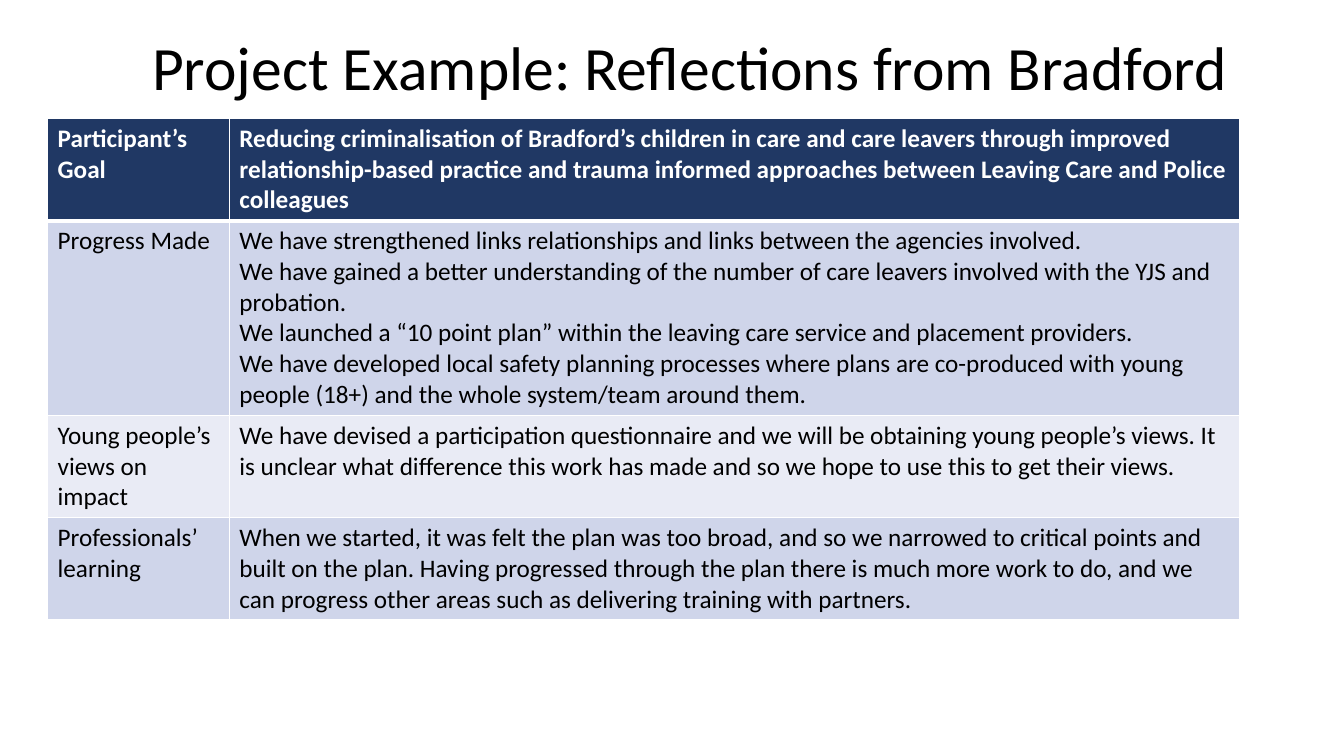
from lxml import etree
from pptx import Presentation
from pptx.dml.color import RGBColor
from pptx.enum.text import MSO_ANCHOR, MSO_AUTO_SIZE, PP_ALIGN
from pptx.oxml.ns import qn
from pptx.util import Cm, Pt

MIDDLE = MSO_ANCHOR.MIDDLE
NO_AUTOFIT = MSO_AUTO_SIZE.NONE
LEFT = PP_ALIGN.LEFT
TITLE_ONLY = 5

REFLECTIONS = [
    ("Participant’s Goal", [
        "Reducing criminalisation of Bradford’s children in care and care leavers "
        "through improved relationship-based practice and trauma informed approaches "
        "between Leaving Care and Police colleagues"]),
    ("Progress Made", [
        "We have strengthened links relationships and links between the agencies involved.",
        "We have gained a better understanding of the number of care leavers involved "
        "with the YJS and probation.",
        "We launched a “10 point plan” within the leaving care service and placement providers.",
        "We have developed local safety planning processes where plans are co-produced "
        "with young people (18+) and the whole system/team around them."]),
    ("Young people’s views on impact", [
        "We have devised a participation questionnaire and we will be obtaining young "
        "people’s views. It is unclear what difference this work has made and so we hope "
        "to use this to get their views."]),
    ("Professionals’ learning", [
        "When we started, it was felt the plan was too broad, and so we narrowed to "
        "critical points and built on the plan. Having progressed through the plan there "
        "is much more work to do, and we can progress other areas such as delivering "
        "training with partners."]),
]


def rgb(code):
    """Turn a hex string into a colour."""
    return RGBColor.from_string(code)


class SlideBuilder:
    """Hold the style and the current slide, and add its elements."""

    FONT = "Calibri"
    INK = "000000"
    WHITE = "FFFFFF"
    NAVY = "203864"
    BANDS = ("E9EBF5", "CFD5EA")

    def __init__(self, slide):
        """Keep the slide to draw on."""
        self.slide = slide

    def format_text(self, frame, size, color, bold=False):
        """Apply the font to every run of a text frame."""
        for paragraph in frame.paragraphs:
            for run in paragraph.runs:
                run.font.name = self.FONT
                run.font.size = Pt(size)
                run.font.bold = bold
                run.font.color.rgb = rgb(color)

    def title(self, wording, left, top, width, height):
        """Fill and place the title placeholder."""
        heading = self.slide.shapes.title
        heading.left, heading.top = Cm(left), Cm(top)
        heading.width, heading.height = Cm(width), Cm(height)
        frame = heading.text_frame
        frame.text = wording
        frame.auto_size = NO_AUTOFIT
        frame.vertical_anchor = MIDDLE
        frame.paragraphs[0].alignment = LEFT
        frame.paragraphs[0].line_spacing = 0.9
        self.format_text(frame, 44, self.INK)

    def borders(self, cell, widths):
        """Draw white cell borders with a width in points for each side."""
        properties = cell._tc.get_or_add_tcPr()
        for side, width in widths.items():
            line = etree.SubElement(properties, qn(f"a:ln{side}"), w=str(Pt(width)))
            fill = etree.SubElement(line, qn("a:solidFill"))
            etree.SubElement(fill, qn("a:srgbClr"), val=self.WHITE)

    def table(self, rows, left, top, column_widths, row_height):
        """Add a table with a dark header row and banded body rows."""
        grid = self.slide.shapes.add_table(
            len(rows), len(column_widths), Cm(left), Cm(top),
            Cm(sum(column_widths)), Cm(row_height * len(rows))).table
        for column, width in zip(grid.columns, column_widths):
            column.width = Cm(width)
        for index, (topic, statements) in enumerate(rows):
            header = index == 0
            widths = {"L": 1, "R": 1, "T": 3 if index == 1 else 1, "B": 3 if header else 1}
            for cell, lines in zip(grid.rows[index].cells, ([topic], statements)):
                self.borders(cell, widths)
                cell.fill.solid()
                cell.fill.fore_color.rgb = rgb(self.NAVY if header else self.BANDS[index % 2])
                cell.text_frame.text = "\n".join(lines)
                self.format_text(cell.text_frame, 18, self.WHITE if header else self.INK, header)


def main():
    """Build and save the slide."""
    deck = Presentation()
    deck.slide_width, deck.slide_height = Cm(33.87), Cm(19.05)
    builder = SlideBuilder(deck.slides.add_slide(deck.slide_layouts[TITLE_ONLY]))
    builder.title("Project Example: Reflections from Bradford", 3.58, 0, 27.66, 3.58)
    builder.table(REFLECTIONS, 1.2, 2.98, (4.58, 25.47), 1.03)
    deck.save("out.pptx")


if __name__ == "__main__":
    main()
